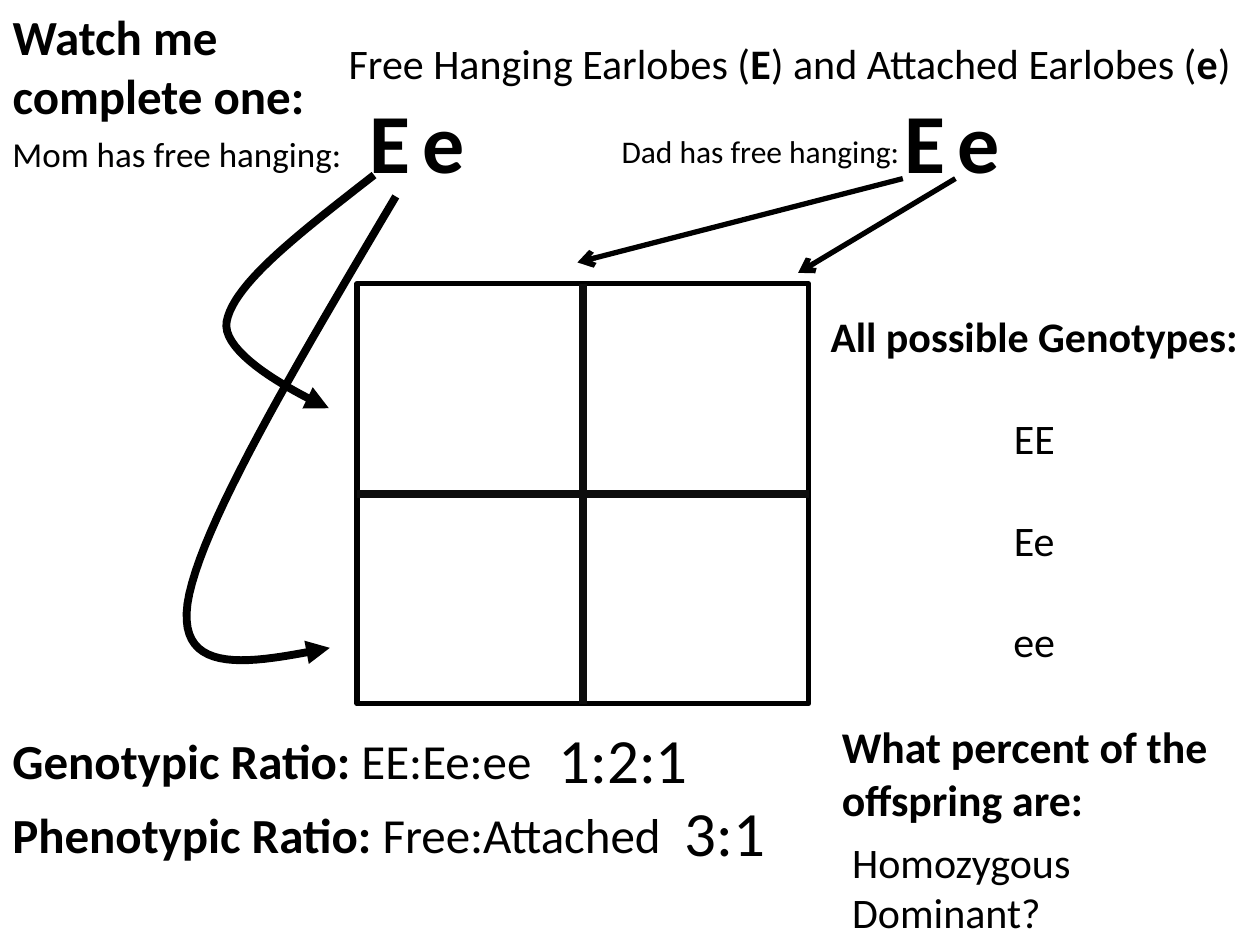
"""Build a Punnett square slide about free hanging and attached earlobes."""
from dataclasses import dataclass

from lxml.etree import SubElement
from pptx import Presentation
from pptx.dml.color import RGBColor
from pptx.enum.shapes import MSO_CONNECTOR as Connector, MSO_SHAPE as Shape
from pptx.enum.text import MSO_ANCHOR as Anchor, MSO_AUTO_SIZE as AutoSize, PP_ALIGN as Align
from pptx.oxml.ns import qn
from pptx.util import Cm, Pt


@dataclass(frozen=True)
class Theme:
    """Colours, font and sizes shared by the slide."""
    font: str = "Calibri"
    ink: RGBColor = RGBColor(0x00, 0x00, 0x00)
    divider: RGBColor = RGBColor(0x0D, 0x0D, 0x0D)
    allele: int = 48
    answer: int = 36
    heading: int = 28
    question: int = 25
    body: int = 24
    mom: int = 20
    dad: int = 18
    thin: float = 3
    thick: float = 4.5
    genotype_gap: float = 29.3


THEME = Theme()


def apply_format(target, values):
    """Set each named attribute on the target."""
    for name, value in values.items():
        setattr(target, name, value)


def write_runs(paragraph, runs, size):
    """Add (text, bold) runs in the theme font."""
    for text, bold in runs:
        run = paragraph.add_run()
        run.text = text
        apply_format(run.font, {"name": THEME.font, "size": Pt(size), "bold": bold})
        run.font.color.rgb = THEME.ink


def fill_frame(frame, paragraphs, size, align=Align.LEFT, gap=0):
    """Write paragraphs of runs into a wrapping, top-anchored frame."""
    apply_format(frame, {"word_wrap": True, "auto_size": AutoSize.NONE,
                         "vertical_anchor": Anchor.TOP})
    for index, runs in enumerate(paragraphs):
        paragraph = frame.add_paragraph() if index else frame.paragraphs[0]
        apply_format(paragraph, {"alignment": align, "space_before": Pt(gap if index else 0)})
        write_runs(paragraph, runs, size)


def add_label(slide, box, runs, size):
    """Add a one-paragraph text box."""
    label = slide.shapes.add_textbox(*map(Cm, box))
    fill_frame(label.text_frame, [runs], size)


def style_line(shape, width, color=THEME.ink, head=None):
    """Set the outline and an optional arrowhead, without a shadow."""
    shape.line.color.rgb = color
    shape.line.width = Pt(width)
    if head:
        SubElement(shape.line._get_or_add_ln(), qn("a:tailEnd"), type=head)


def add_line(shapes, start, end, width, color=THEME.ink, head=None):
    """Add a straight connector, optionally with an arrowhead."""
    line = shapes.add_connector(Connector.STRAIGHT, *map(Cm, (*start, *end)))
    style_line(line, width, color, head)
    SubElement(line._element.spPr, qn("a:effectLst"))


def bezier(points, steps=24):
    """Return evenly stepped points along a cubic curve."""
    def at(t):
        weights = ((1 - t) ** 3, 3 * t * (1 - t) ** 2, 3 * t ** 2 * (1 - t), t ** 3)
        return tuple(Cm(sum(w * p[axis] for w, p in zip(weights, points))) for axis in (0, 1))
    return [at(step / steps) for step in range(steps + 1)]


def add_curved_arrow(slide, points):
    """Draw a thick arrow through joined cubic curves."""
    track = bezier(points[:4]) + bezier(points[3:])[1:]
    builder = slide.shapes.build_freeform(*track[0])
    builder.add_line_segments(track[1:], close=False)
    arrow = builder.convert_to_shape()
    arrow.shadow.inherit = False
    arrow.fill.background()
    style_line(arrow, THEME.thick, head="triangle")


def add_punnett_square(slide, left, top, width, height):
    """Add the grouped two-by-two square."""
    square = slide.shapes.add_group_shape().shapes
    frame = square.add_shape(Shape.RECTANGLE, *map(Cm, (left, top, width, height)))
    frame.shadow.inherit = False
    frame.fill.background()
    style_line(frame, THEME.thin)
    middle_x, middle_y = left + width / 2, top + height / 2
    add_line(square, (middle_x, top), (middle_x, top + height), THEME.thick, THEME.divider)
    add_line(square, (left, middle_y), (left + width, middle_y), THEME.thick, THEME.divider)


def add_title(slide, text):
    """Place and format the title placeholder."""
    title = slide.shapes.title
    apply_format(title, dict(zip(("left", "top", "width", "height"),
                                 map(Cm, (0, 0, 8.26, 2.64)))))
    fill_frame(title.text_frame, [[(text, True)]], THEME.heading)


def add_genotypes(slide):
    """List the possible genotypes under their heading."""
    genotypes = slide.shapes.add_textbox(*map(Cm, (16.3, 6.14, 9.1, 7.44)))
    lines = [[("All possible Genotypes:", True)]]
    lines += [[(genotype, False)] for genotype in ("EE", "Ee", "ee")]
    fill_frame(genotypes.text_frame, lines, THEME.body, Align.CENTER, THEME.genotype_gap)


def main():
    """Build and save the slide."""
    deck = Presentation()
    deck.slide_width, deck.slide_height = Cm(25.4), Cm(19.05)
    slide = deck.slides.add_slide(deck.slide_layouts[5])
    add_title(slide, "Watch me complete one:")
    add_punnett_square(slide, 7.2, 5.72, 9.1, 8.47)

    traits = [("Free Hanging Earlobes (", False), ("E", True),
              (") and Attached Earlobes (", False), ("e", True), (")", False)]
    add_label(slide, (6.78, 0.64, 18.62, 1.27), traits, THEME.body)
    add_label(slide, (0, 2.54, 9.1, 1.12), [("Mom has free hanging:", False)], THEME.mom)
    add_label(slide, (12.28, 2.54, 6.14, 1.02), [("Dad has free hanging:", False)], THEME.dad)
    for allele, left, width in (("E", 7.2, 1.48), ("e", 8.26, 1.27),
                                ("E", 17.99, 1.06), ("e", 19.05, 1.06)):
        add_label(slide, (left, 1.69, width, 2.31), [(allele, True)], THEME.allele)

    add_curved_arrow(slide, [(7.54, 3.53), (6.15, 4.62), (4.72, 5.69), (4.57, 6.48),
                             (4.42, 7.26), (6.63, 8.23), (6.63, 8.23)])
    add_curved_arrow(slide, [(7.98, 3.96), (5.99, 7.32), (4.01, 10.64), (3.78, 12.17),
                             (3.58, 13.67), (5.11, 13.36), (6.65, 13.06)])
    for start, end in (((18.2, 3.6), (11.64, 5.29)), ((19.26, 3.6), (16.09, 5.5))):
        add_line(slide.shapes, start, end, THEME.thin, head="arrow")

    ratios = (("Genotypic Ratio: ", "EE:Ee:ee", "1:2:1", 14.61, 13.55, 11.01, 5.72),
              ("Phenotypic Ratio: ", "Free:Attached", "3:1", 16.09, 15.24, 13.55, 3.6))
    for name, terms, answer, top, width, answer_left, answer_width in ratios:
        add_label(slide, (0, top, width, 1.45), [(name, True), (terms, False)], THEME.heading)
        add_label(slide, (answer_left, top - 0.21, answer_width, 1.8),
                  [(answer, False)], THEME.answer)

    add_genotypes(slide)
    add_label(slide, (16.72, 14.39, 10.37, 2.49),
              [("What percent of the offspring are:", True)], THEME.question)
    add_label(slide, (16.93, 16.74, 8.47, 2.31), [("Homozygous Dominant?", False)], THEME.body)
    deck.save("out.pptx")


if __name__ == "__main__":
    main()
